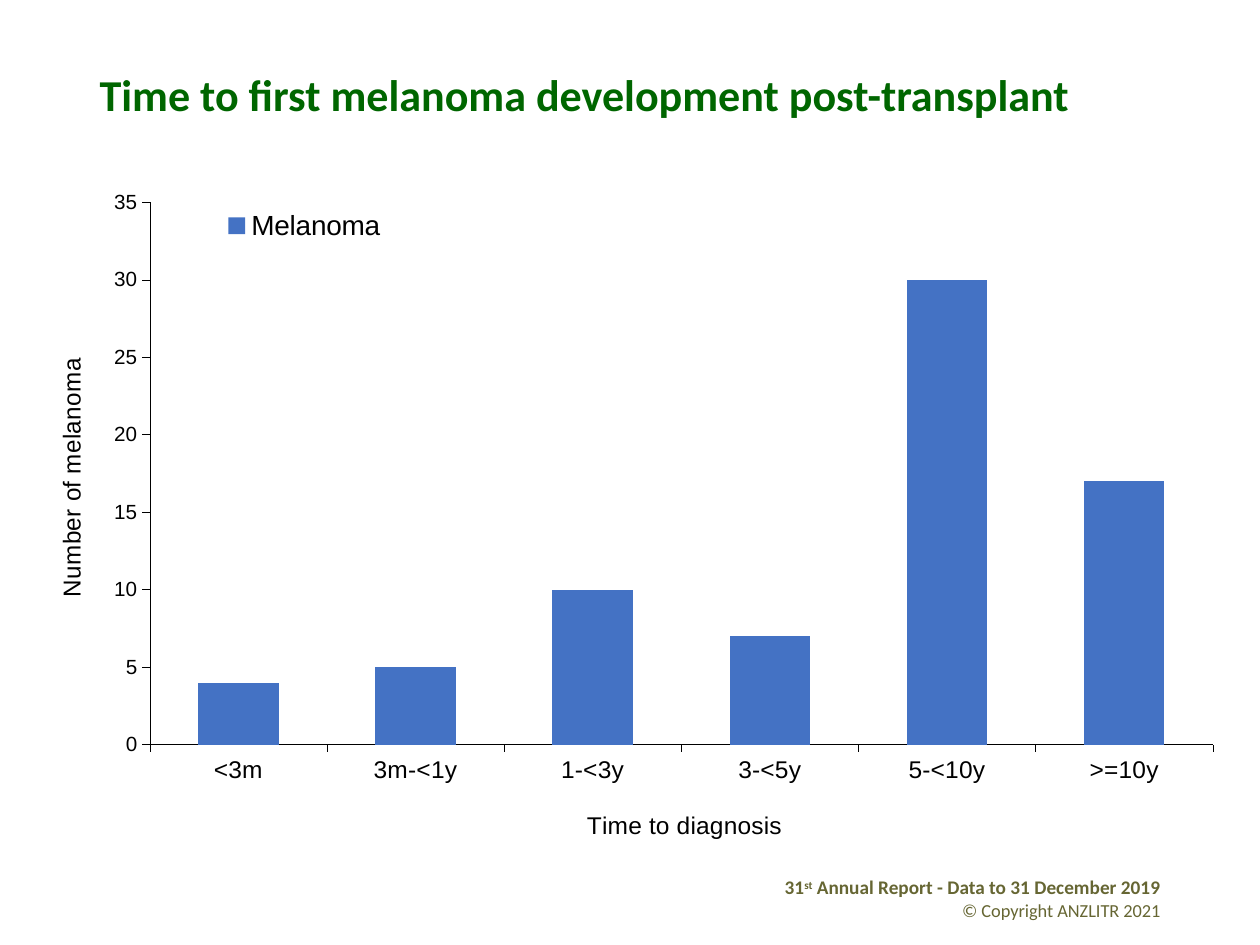
"""Builds the slide on time to first melanoma after transplant."""
from lxml import etree
from pptx import Presentation
from pptx.chart.data import CategoryChartData
from pptx.dml.color import RGBColor
from pptx.enum.chart import XL_CHART_TYPE, XL_LEGEND_POSITION, XL_TICK_MARK
from pptx.enum.text import MSO_ANCHOR, PP_ALIGN
from pptx.oxml.ns import qn
from pptx.util import Inches, Pt

COLUMNS = XL_CHART_TYPE.COLUMN_CLUSTERED
LEGEND_RIGHT = XL_LEGEND_POSITION.RIGHT
TICK_OUT, TICK_NONE = XL_TICK_MARK.OUTSIDE, XL_TICK_MARK.NONE
MIDDLE, LEFT, RIGHT = MSO_ANCHOR.MIDDLE, PP_ALIGN.LEFT, PP_ALIGN.RIGHT
COLORS = {"title": "006600", "footer": "666633", "bar": "4472C4", "ink": "000000"}
CASES = {"<3m": 4, "3m-<1y": 5, "1-<3y": 10, "3-<5y": 7, "5-<10y": 30, ">=10y": 17}


def style_font(font, size, color, name="Arial", bold=False):
    font.name, font.size, font.bold = name, Pt(size), bold
    font.color.rgb = RGBColor.from_string(COLORS[color])


def add_span(para, text, size, color, bold=False):
    span = para.add_run()
    span.text = text
    style_font(span.font, size, color, "Calibri", bold)
    return span


def set_layout(element, index, shares, inner=False):
    """Place a chart part by its x, y, w and h shares of the chart."""
    for old in element.findall(qn("c:layout")):
        element.remove(old)
    layout = etree.Element(qn("c:layout"))
    manual = etree.SubElement(layout, qn("c:manualLayout"))
    settings = [("layoutTarget", "inner")] if inner else []
    settings += [("xMode", "edge"), ("yMode", "edge")]
    settings += zip("xywh", shares)
    for tag, value in settings:
        etree.SubElement(manual, qn(f"c:{tag}")).set("val", str(value))
    element.insert(index, layout)


def format_axis(axis, title, size, place):
    axis.has_major_gridlines = False
    axis.major_tick_mark, axis.minor_tick_mark = TICK_OUT, TICK_NONE
    axis.format.line.color.rgb = RGBColor.from_string(COLORS["ink"])
    axis.format.line.width = Pt(0.22)
    style_font(axis.tick_labels.font, size, "ink")
    para = axis.axis_title.text_frame.paragraphs[0]
    span = para.add_run()
    span.text = title
    style_font(span.font, 14, "ink")
    set_layout(axis.axis_title._element, 1, place)


def add_title(page, text):
    box = page.shapes.title
    box.left, box.top, box.width, box.height = map(Inches, (0.69, 0.4, 8.62, 0.74))
    box.text_frame.vertical_anchor = MIDDLE
    para = box.text_frame.paragraphs[0]
    para.alignment, para.line_spacing = LEFT, 0.9
    add_span(para, text, 25.2, "title", True)


def add_melanoma_chart(page):
    data = CategoryChartData()
    data.categories = list(CASES)
    data.add_series("Melanoma", list(CASES.values()))
    area = map(Inches, (0.11, 1.34, 9.81, 5.38))
    chart = page.shapes.add_chart(COLUMNS, *area, data).chart
    style_font(chart.font, 20.1, "ink", "Montserrat", True)
    chart.has_title = False
    plot = chart.plots[0]
    plot.gap_width, plot.overlap, plot.vary_by_categories = 120, 50, False
    fill = plot.series[0].format.fill
    fill.solid()
    fill.fore_color.rgb = RGBColor.from_string(COLORS["bar"])
    format_axis(chart.category_axis, "Time to diagnosis", 14, (0.46, 0.95))
    format_axis(chart.value_axis, "Number of melanoma", 11.8, (0.03, 0.28))
    chart.value_axis.minimum_scale, chart.value_axis.maximum_scale = 0, 35
    chart.value_axis.major_unit = 5
    chart.has_legend = True
    chart.legend.position = LEGEND_RIGHT
    chart.legend.include_in_layout = False
    style_font(chart.legend.font, 16, "ink")
    set_layout(chart.legend._element, 1, (0.15, 0.05, 0.17, 0.07))
    plot_area = chart._chartSpace.chart.plotArea
    set_layout(plot_area, 0, (0.11, 0.05, 0.86, 0.81), inner=True)


def add_footer(page):
    box = page.shapes.add_textbox(*map(Inches, (5.89, 6.9, 3.42, 0.4)))
    box.text_frame.word_wrap = True
    report = box.text_frame.paragraphs[0]
    notice = box.text_frame.add_paragraph()
    report.alignment = notice.alignment = RIGHT
    add_span(report, "31", 11, "footer", True)
    ordinal = add_span(report, "st", 11, "footer", True)
    ordinal.font._element.set("baseline", "30000")
    add_span(report, " Annual Report - Data to 31 December 2019", 11, "footer", True)
    add_span(notice, "© Copyright ANZLITR 2021", 10.5, "footer")


def main():
    deck = Presentation()
    deck.slide_width, deck.slide_height = Inches(10), Inches(7.5)
    page = deck.slides.add_slide(deck.slide_layouts[5])
    add_footer(page)
    add_title(page, "Time to first melanoma development post-transplant")
    add_melanoma_chart(page)
    deck.save("out.pptx")


if __name__ == "__main__":
    main()
